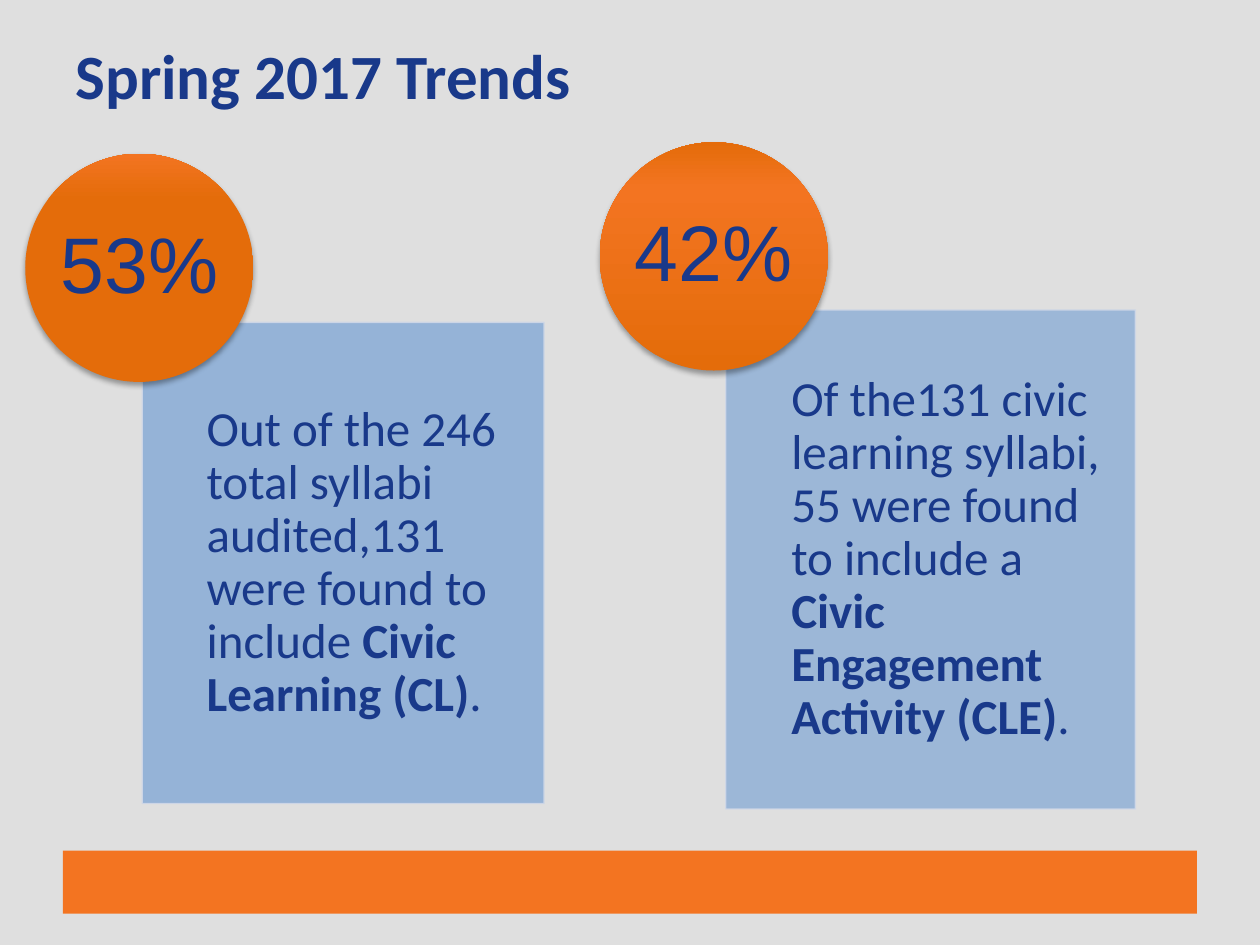
import pptx
import pptx.dml.color
import pptx.enum.shapes
import pptx.enum.text
import pptx.oxml
import pptx.oxml.ns
import pptx.util
from lxml import etree

Cm = pptx.util.Cm
Pt = pptx.util.Pt
SHAPE = pptx.enum.shapes.MSO_SHAPE
ALIGN = pptx.enum.text.PP_ALIGN
MIDDLE = pptx.enum.text.MSO_ANCHOR.MIDDLE
qn = pptx.oxml.ns.qn

NAVY, ORANGE, DARK_ORANGE = "19398A", "F37421", "E46C0A"
PANEL_BLUE, PANEL_EDGE, BACKGROUND = "95B3D7", "D0D8E8", "DFDFDF"
CIRCLE_SIZE = 4.6


def color(value):
    return pptx.dml.color.RGBColor.from_string(value)


def paint(fill, value, opacity=100):
    fill.solid()
    fill.fore_color.rgb = color(value)
    if opacity < 100:
        color_element = fill._xPr.find(qn("a:solidFill"))[0]
        etree.SubElement(color_element, qn("a:alpha"), val=str(opacity * 1000))


def paint_gradient(shape, stops):
    """Fill upwards with (percent, colour) stops."""
    shape.fill.gradient()
    shape.fill.gradient_angle = 90
    stop_list = shape._element.spPr.find(qn("a:gradFill")).find(qn("a:gsLst"))
    for stop in list(stop_list):
        stop_list.remove(stop)
    for percent, value in stops:
        stop = etree.SubElement(stop_list, qn("a:gs"), pos=str(percent * 1000))
        etree.SubElement(stop, qn("a:srgbClr"), val=value)


def add_shadow(shape):
    effects = shape._element.spPr.find(qn("a:effectLst"))
    shadow = etree.SubElement(
        effects, qn("a:outerShdw"), blurRad=str(Pt(3.1)), dist=str(Pt(1.8)),
        dir="5400000", rotWithShape="0")
    shadow_color = etree.SubElement(shadow, qn("a:srgbClr"), val="000000")
    etree.SubElement(shadow_color, qn("a:alpha"), val="35000")


def add_plain_shape(slide, kind, left, top, width, height):
    shape = slide.shapes.add_shape(kind, Cm(left), Cm(top), Cm(width), Cm(height))
    shape.shadow.inherit = False
    shape.line.fill.background()
    return shape


def write(shape, runs, size, font_name, alignment, margins=None):
    """Write (text, bold) runs as one paragraph; margins run left, top, right, bottom."""
    frame = shape.text_frame
    frame.word_wrap = True
    frame.vertical_anchor = MIDDLE
    if margins:
        (frame.margin_left, frame.margin_top,
         frame.margin_right, frame.margin_bottom) = map(Cm, margins)
    paragraph = frame.paragraphs[0]
    paragraph.alignment = alignment
    paragraph.line_spacing = 0.9
    for text, bold in runs:
        run = paragraph.add_run()
        run.text = text
        run.font.size = Pt(size)
        run.font.name = font_name
        run.font.bold = bold
        run.font.color.rgb = color(NAVY)


def add_title(slide, left, top, width, height):
    title = slide.shapes.title
    title.left, title.top, title.width, title.height = map(Cm, (left, top, width, height))
    write(title, [("Spring 2017 Trends", True)], 36, "Calibri", ALIGN.LEFT)


def add_footer_bar(slide, left, top, width, height):
    bar = add_plain_shape(slide, SHAPE.RECTANGLE, left, top, width, height)
    paint(bar.fill, ORANGE)


def add_trend(slide, box, panel_size, opacity, stops, percentage, runs):
    """Place a circle at the box's top left and a text panel at its bottom right."""
    left, top, width, height = box
    panel_width, panel_height = panel_size
    panel = add_plain_shape(slide, SHAPE.RECTANGLE, left + width - panel_width,
                            top + height - panel_height, panel_width, panel_height)
    paint(panel.fill, PANEL_BLUE, opacity)
    paint(panel.line.fill, PANEL_EDGE, 90)
    panel.line.width = Pt(0.75)
    write(panel, runs, 28, "Calibri", ALIGN.LEFT, (panel_width * 0.16, 0.56, 0.56, 0.56))

    circle = add_plain_shape(slide, SHAPE.OVAL, left, top, CIRCLE_SIZE, CIRCLE_SIZE)
    paint_gradient(circle, stops)
    add_shadow(circle)
    write(circle, [(percentage, False)], 45, "Arial", ALIGN.CENTER, (0, 0, 0, 0))


def main():
    presentation = pptx.Presentation()
    presentation.slide_width, presentation.slide_height = Cm(25.4), Cm(19.05)
    slide = presentation.slides.add_slide(presentation.slide_layouts.get_by_name("Title Only"))
    paint(slide.background.fill, BACKGROUND)
    add_footer_bar(slide, 1.27, 17.15, 22.86, 1.27)
    add_title(slide, 1.27, 0, 22.86, 3.18)
    add_trend(
        slide, (0.51, 3.1, 10.46, 13.1), (8.1, 9.7), 100,
        [(0, DARK_ORANGE), (80, DARK_ORANGE), (100, ORANGE)], "53%",
        [("Out of the 246 total syllabi audited,131 were found to include ", False),
         ("Civic Learning (CL)", True), (".", False)])
    add_trend(
        slide, (12.09, 2.87, 10.8, 13.44), (8.26, 10.06), 90,
        [(0, DARK_ORANGE), (80, ORANGE), (100, DARK_ORANGE)], "42%",
        [("Of the131 civic learning syllabi, 55 were found to include a ", False),
         ("Civic Engagement Activity (CLE)", True), (".", False)])
    presentation.save("out.pptx")


if __name__ == "__main__":
    main()
